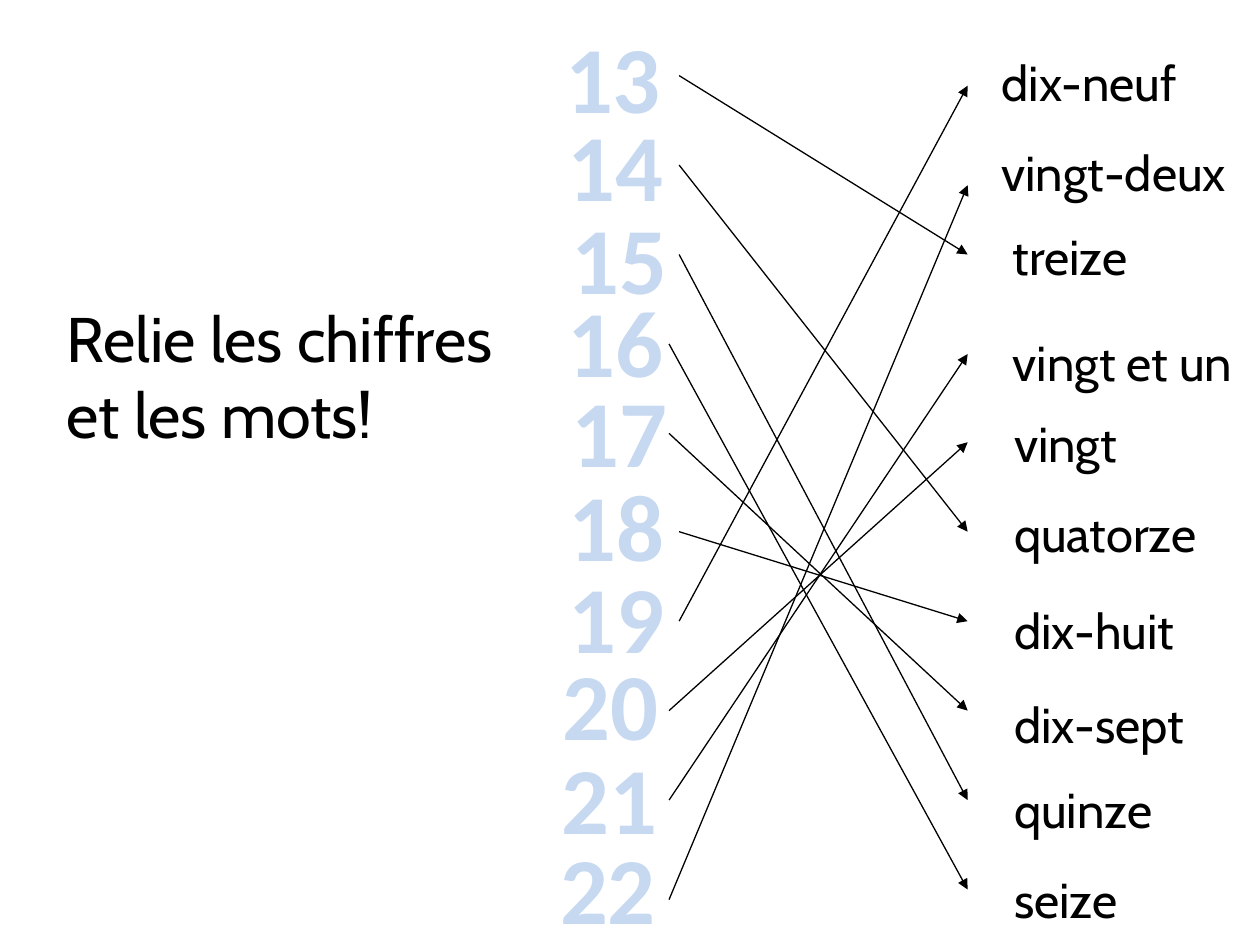
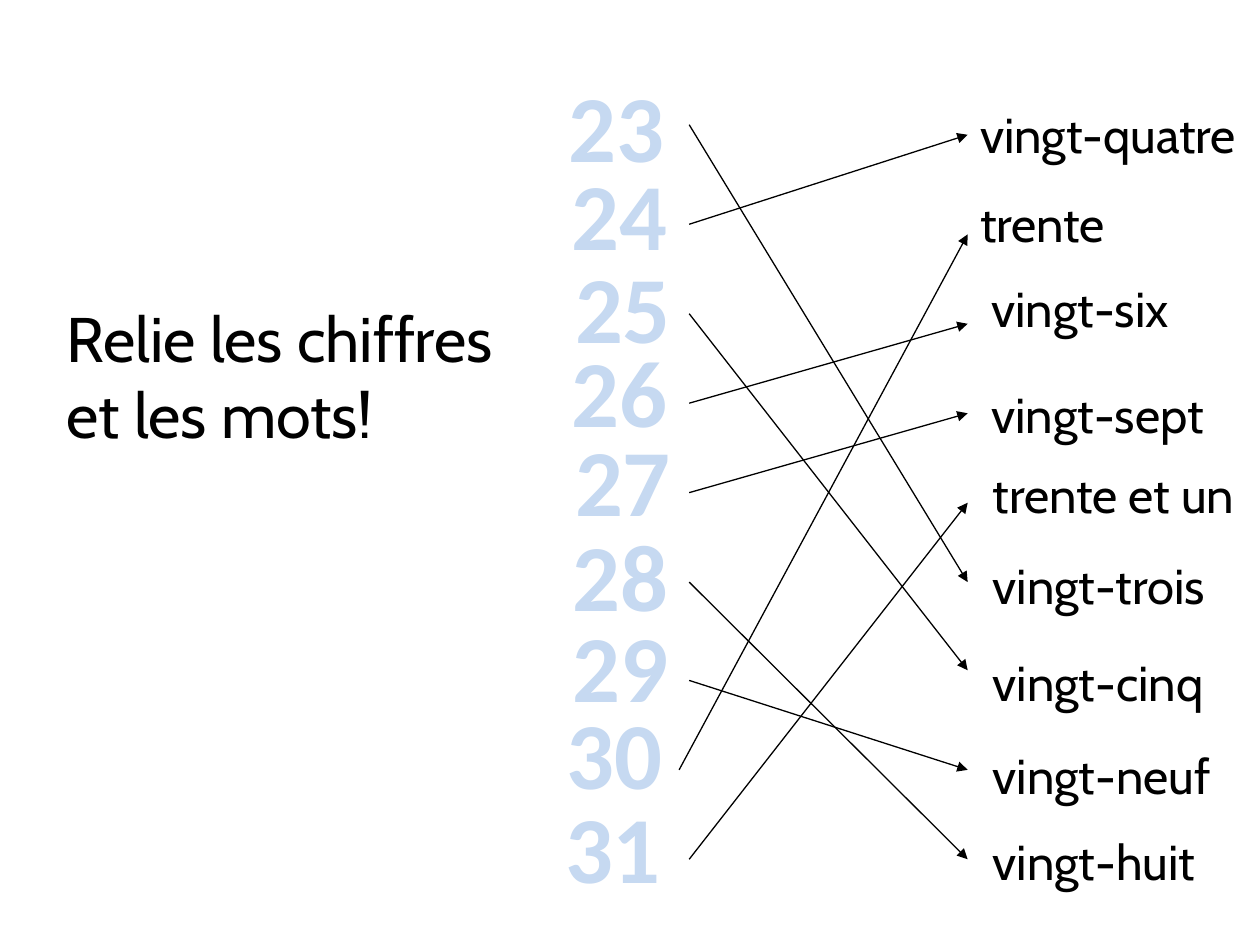
from lxml import etree
from pptx import Presentation
from pptx import util as u
from pptx.dml.color import RGBColor
from pptx.enum import dml, shapes, text
from pptx.oxml import ns

# Shared style
BLACK = RGBColor(0x00, 0x00, 0x00)
NAVY = RGBColor(0x1F, 0x49, 0x7D)
PALE_BLUE = RGBColor(0xC6, 0xD9, 0xF1)
OUTLINE = RGBColor(0x17, 0x37, 0x5E)
WORD_FONT, NUMBER_FONT = "Cabin", "Calibri"
INSTRUCTION = "Relie les chiffres et les mots!"

# Hand-placed columns, as (left, top) in inches; each slide shifts them
NUMBER_SPOTS = [(4.38, 0.1), (4.4, 0.8), (4.43, 1.54), (4.4, 2.2), (4.43, 2.91),
                (4.41, 3.66), (4.41, 4.39), (4.36, 5.08), (4.35, 5.82), (4.34, 6.54)]
WORD_SPOTS = [(7.85, 0.37), (7.85, 1.08), (7.94, 1.75), (7.94, 2.59), (7.95, 3.23),
              (7.95, 3.95), (7.95, 4.72), (7.95, 5.46), (7.95, 6.14), (7.95, 6.85)]
TIP_X = 7.68

# words: (word, height of the arrow tip), from top to bottom
# matches: (number, its word, where the arrow starts)
EXERCISES = [
    {
        "number_shift": (0, 0),
        "word_shift": (0, 0),
        "words": [("dix-neuf", 0.68), ("vingt-deux", 1.47), ("treize", 2.02),
                  ("vingt et un", 2.81), ("vingt", 3.51), ("quatorze", 4.22),
                  ("dix-huit", 4.93), ("dix-sept", 5.64), ("quinze", 6.35),
                  ("seize", 7.06)],
        "matches": [(13, "treize", (5.39, 0.6)), (14, "quatorze", (5.39, 1.31)),
                    (15, "quinze", (5.39, 2.02)), (16, "seize", (5.31, 2.73)),
                    (17, "dix-sept", (5.31, 3.44)), (18, "dix-huit", (5.39, 4.22)),
                    (19, "dix-neuf", (5.39, 4.93)), (20, "vingt", (5.31, 5.64)),
                    (21, "vingt et un", (5.31, 6.35)), (22, "vingt-deux", (5.31, 7.14))],
    },
    {
        "number_shift": (0.03, 0.39),
        "word_shift": (-0.17, 0.41),
        "words": [("vingt-quatre", 1.07), ("trente", 1.86), ("vingt-six", 2.57),
                  ("vingt-sept", 3.28), ("trente et un", 3.99), ("vingt-trois", 4.62),
                  ("vingt-cinq", 5.32), ("vingt-neuf", 6.11), ("vingt-huit", 6.82)],
        "matches": [(23, "vingt-trois", (5.47, 0.99)), (24, "vingt-quatre", (5.47, 1.78)),
                    (25, "vingt-cinq", (5.47, 2.49)), (26, "vingt-six", (5.47, 3.2)),
                    (27, "vingt-sept", (5.47, 3.91)), (28, "vingt-huit", (5.47, 4.62)),
                    (29, "vingt-neuf", (5.47, 5.4)), (30, "trente", (5.39, 6.11)),
                    (31, "trente et un", (5.47, 6.82))],
    },
]


def add_text(s, content, spot, size, font, points, wrap=True):
    """Add a one-run text box and return its paragraph and run."""
    tb = s.shapes.add_textbox(*(u.Inches(v) for v in (*spot, *size)))
    tf = tb.text_frame
    tf.word_wrap = wrap
    tf.auto_size = text.MSO_AUTO_SIZE.SHAPE_TO_FIT_TEXT
    p = tf.paragraphs[0]
    r = p.add_run()
    r.text = content
    r.font.name = font
    r.font.size = u.Pt(points)
    r.font.color.rgb = BLACK
    return p, r


def add_number(s, number, spot):
    """Add a bold, hatched and outlined number."""
    p, r = add_text(s, str(number), spot, (0.97, 1.01), NUMBER_FONT, 54, wrap=False)
    p.alignment = text.PP_ALIGN.CENTER
    r.font.bold = True
    fill = r.font.fill
    fill.patterned()
    fill.pattern = dml.MSO_PATTERN.DARK_UPWARD_DIAGONAL
    fill.fore_color.rgb = NAVY
    fill.back_color.rgb = PALE_BLUE
    # The outline must come before the fill
    ln = etree.Element(ns.qn("a:ln"), w=str(u.Pt(1)))
    solid = etree.SubElement(ln, ns.qn("a:solidFill"))
    etree.SubElement(solid, ns.qn("a:srgbClr"), val=str(OUTLINE))
    r.font._element.insert(0, ln)


def add_arrow(s, start, end):
    c = s.shapes.add_connector(shapes.MSO_CONNECTOR.STRAIGHT,
                               *(u.Inches(v) for v in (*start, *end)))
    c.line.color.rgb = BLACK
    c.line.width = u.Pt(0.75)
    etree.SubElement(c.line._get_or_add_ln(), ns.qn("a:tailEnd"), type="triangle")
    etree.SubElement(c._element.spPr, ns.qn("a:effectLst"))


def shifted(spots, shift):
    return [(x + shift[0], y + shift[1]) for x, y in spots]


def add_exercise(prs, exercise):
    s = prs.slides.add_slide(prs.slide_layouts[6])
    words, matches = exercise["words"], exercise["matches"]

    # Arrows from each number to its word
    tips = dict(words)
    for _, word, start in matches:
        add_arrow(s, start, (TIP_X, tips[word]))

    # Instruction
    add_text(s, INSTRUCTION, (0.43, 2.33), (3.74, 1.31), WORD_FONT, 36)

    # Number and word columns
    for (number, *_), spot in zip(matches, shifted(NUMBER_SPOTS, exercise["number_shift"])):
        add_number(s, number, spot)
    for (word, _), spot in zip(words, shifted(WORD_SPOTS, exercise["word_shift"])):
        add_text(s, word, spot, (3.08, 0.57), WORD_FONT, 28)


def main():
    prs = Presentation()
    prs.slide_width, prs.slide_height = u.Inches(10), u.Inches(7.5)
    for exercise in EXERCISES:
        add_exercise(prs, exercise)
    prs.save("out.pptx")


if __name__ == "__main__":
    main()
